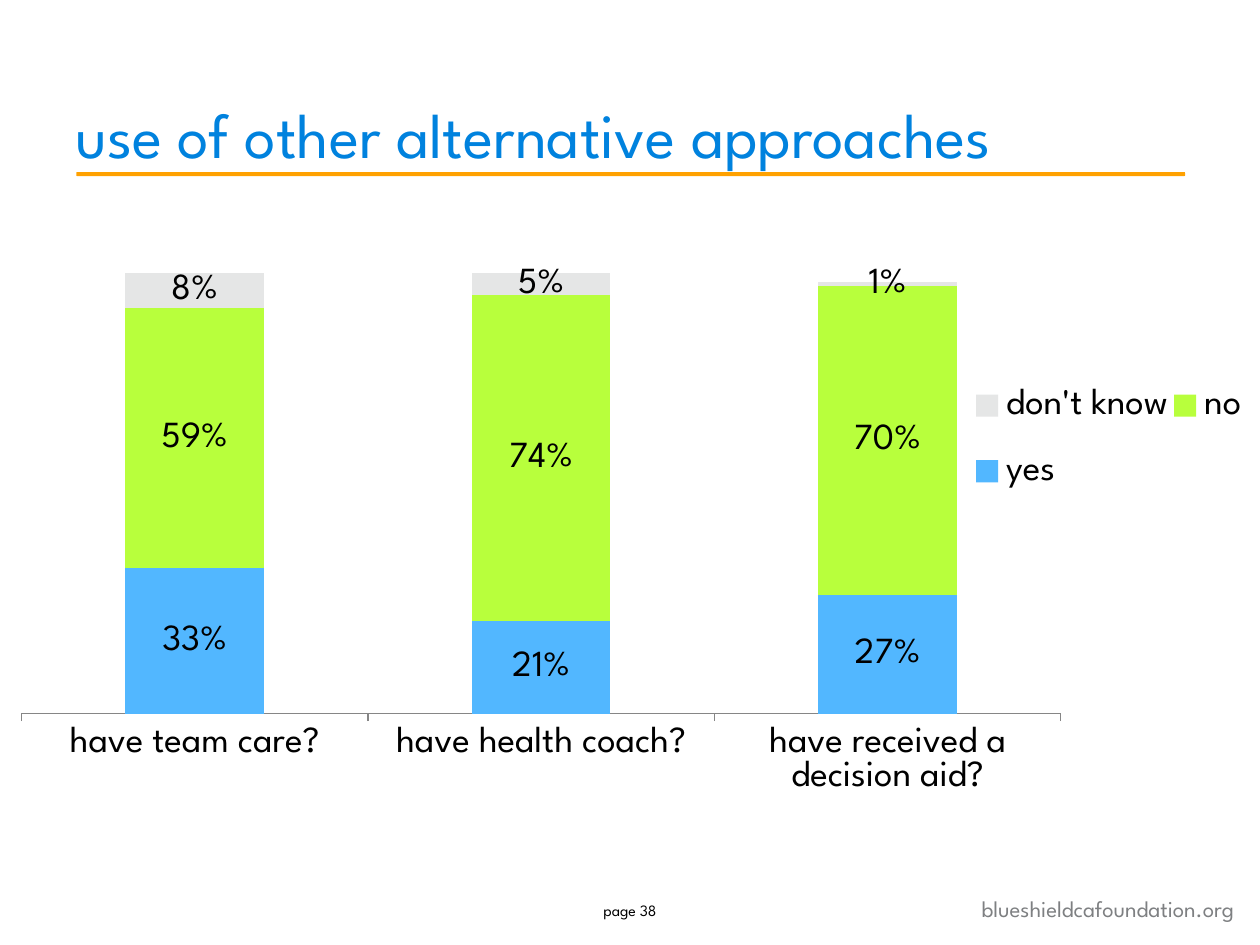
import pptx
import pptx.chart.data
import pptx.dml.color
import pptx.enum.chart
import pptx.enum.shapes
import pptx.enum.text
import pptx.util
from dataclasses import dataclass
from lxml import etree
from pptx.util import Cm, Pt

ALIGN = pptx.enum.text.PP_ALIGN
ANCHOR = pptx.enum.text.MSO_ANCHOR
CHART = pptx.enum.chart


@dataclass(frozen=True)
class Theme:
    font: str = "League Spartan"
    black: str = "000000"
    title_blue: str = "0082DE"
    rule_orange: str = "FFA100"
    footer_grey: str = "7E8082"
    axis_grey: str = "868686"
    title_size: float = 36
    title_leading: float = 42
    chart_size: float = 18
    label_size: float = 21
    footer_size: float = 13
    page_size: float = 9


@dataclass(frozen=True)
class Frame:
    left: float
    top: float
    width: float
    height: float

    def lengths(self) -> tuple:
        return Cm(self.left), Cm(self.top), Cm(self.width), Cm(self.height)


@dataclass(frozen=True)
class Label:
    text: str
    frame: Frame
    size: float
    color: str
    align: ALIGN = ALIGN.LEFT
    anchor: ANCHOR = ANCHOR.TOP
    leading: float | None = None


@dataclass(frozen=True)
class Answer:
    name: str
    shares: tuple[float, ...]
    color: str


THEME = Theme()
LABELS = (
    Label("blueshieldcafoundation.org", Frame(18.29, 17.91, 6.83, 0.81),
          THEME.footer_size, THEME.footer_grey, ALIGN.RIGHT),
    Label("use of other alternative approaches", Frame(1.27, 0.61, 22.86, 2.97),
          THEME.title_size, THEME.title_blue, anchor=ANCHOR.BOTTOM,
          leading=THEME.title_leading),
    Label("page 38", Frame(11.57, 17.68, 2.26, 1.32),
          THEME.page_size, THEME.black, ALIGN.CENTER, ANCHOR.MIDDLE),
)
QUESTIONS = ("have team care?", "have health coach?", "have received a decision aid?")
ANSWERS = (
    Answer("yes", (0.33, 0.21, 0.27), "52B7FF"),
    Answer("no", (0.59, 0.74, 0.7), "B8FF3C"),
    Answer("don't know", (0.08, 0.05, 0.01), "E5E6E6"),
)


def rgb(color: str) -> pptx.dml.color.RGBColor:
    return pptx.dml.color.RGBColor.from_string(color)


def style_font(font, size: float, color: str = THEME.black) -> None:
    font.name = THEME.font
    font.size = Pt(size)
    font.color.rgb = rgb(color)


def add_label(page, label: Label) -> None:
    box = page.shapes.add_textbox(*label.frame.lengths())
    box.text_frame.word_wrap = True
    box.text_frame.vertical_anchor = label.anchor
    para = box.text_frame.paragraphs[0]
    para.alignment = label.align
    if label.leading:
        para.line_spacing = Pt(label.leading)
    span = para.add_run()
    span.text = label.text
    style_font(span.font, label.size, label.color)


def add_rule(page, frame: Frame) -> None:
    rule = page.shapes.add_shape(
        pptx.enum.shapes.MSO_SHAPE.ROUNDED_RECTANGLE, *frame.lengths())
    rule.shadow.inherit = False
    rule.fill.solid()
    rule.fill.fore_color.rgb = rgb(THEME.rule_orange)
    rule.line.fill.background()


def make_layout(x: float, y: float, w: float, h: float, inner: bool = False):
    namespace = "http://schemas.openxmlformats.org/drawingml/2006/chart"
    layout = etree.Element(f"{{{namespace}}}layout")
    manual = etree.SubElement(layout, f"{{{namespace}}}manualLayout")
    settings = [("layoutTarget", "inner")] if inner else []
    settings += [("xMode", "edge"), ("yMode", "edge"),
                 ("x", x), ("y", y), ("w", w), ("h", h)]
    for tag, value in settings:
        etree.SubElement(manual, f"{{{namespace}}}{tag}").set("val", str(value))
    return layout


def place(parent, layout, index: int) -> None:
    for old in parent.findall(layout.tag):
        parent.remove(old)
    parent.insert(index, layout)


def add_answer_chart(page, frame: Frame) -> None:
    data = pptx.chart.data.CategoryChartData(number_format="0%")
    data.categories = QUESTIONS
    for answer in ANSWERS:
        data.add_series(answer.name, answer.shares)
    chart = page.shapes.add_chart(
        CHART.XL_CHART_TYPE.COLUMN_STACKED, *frame.lengths(), data).chart
    style_font(chart.font, THEME.chart_size)
    chart.has_title = False

    plot = chart.plots[0]
    plot.gap_width = 150
    plot.overlap = 100
    plot.vary_by_categories = False
    for series, answer in zip(plot.series, ANSWERS):
        series.format.fill.solid()
        series.format.fill.fore_color.rgb = rgb(answer.color)
        labels = series.data_labels
        labels.show_value = True
        labels.number_format = "0%"
        labels.number_format_is_linked = False
        labels.position = CHART.XL_LABEL_POSITION.CENTER
        style_font(labels.font, THEME.label_size)

    questions = chart.category_axis
    questions.major_tick_mark = CHART.XL_TICK_MARK.OUTSIDE
    questions.format.line.color.rgb = rgb(THEME.axis_grey)
    questions.format.line.width = Pt(0.75)
    style_font(questions.tick_labels.font, THEME.label_size)
    shares = chart.value_axis
    shares.minimum_scale = 0
    shares.maximum_scale = 1
    shares.has_major_gridlines = False
    shares.visible = False

    chart.has_legend = True
    legend = chart.legend
    legend.position = CHART.XL_LEGEND_POSITION.RIGHT
    legend.include_in_layout = False
    style_font(legend.font, THEME.label_size)
    place(legend._element, make_layout(0.77, 0.21, 0.22, 0.25), 1)
    plot_area = chart._chartSpace.chart.plotArea
    place(plot_area, make_layout(0.017, 0.081, 0.825, 0.677, inner=True), 0)


def main() -> None:
    deck = pptx.Presentation()
    deck.slide_width = Cm(25.4)
    deck.slide_height = Cm(19.05)
    page = deck.slides.add_slide(deck.slide_layouts[6])
    add_rule(page, Frame(1.54, 3.47, 22.35, 0.08))
    add_answer_chart(page, Frame(0, 4.44, 25.4, 13.13))
    for label in LABELS:
        add_label(page, label)
    deck.save("out.pptx")


if __name__ == "__main__":
    main()
